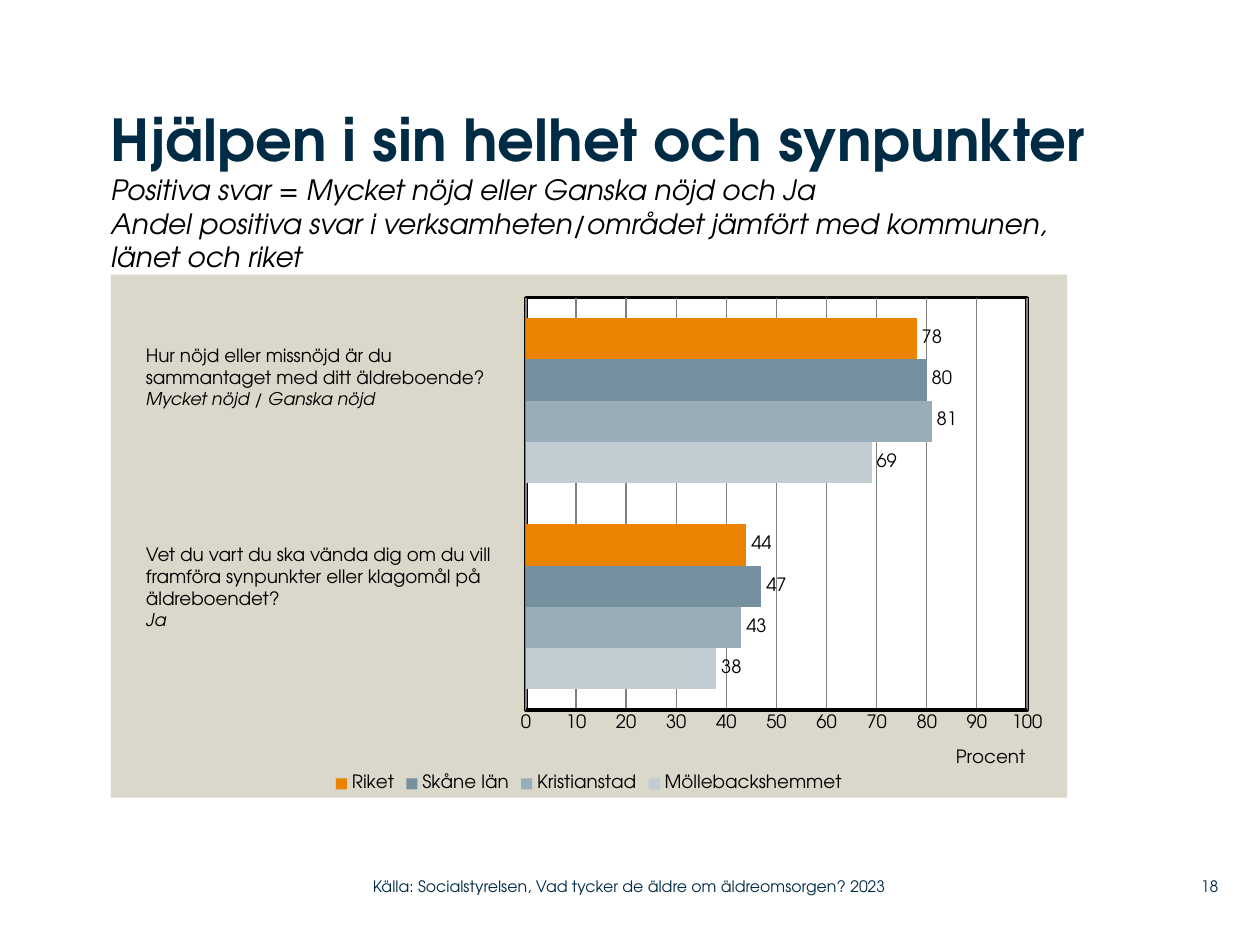
from lxml.etree import fromstring
from pptx import Presentation
from pptx.chart.data import CategoryChartData
from pptx.dml.color import RGBColor
from pptx.enum.chart import XL_CHART_TYPE, XL_LABEL_POSITION, XL_LEGEND_POSITION, XL_TICK_MARK
from pptx.enum.text import MSO_ANCHOR, PP_ALIGN
from pptx.oxml.ns import nsdecls, qn
from pptx.util import Inches, Pt

FONT = "TeX Gyre Adventor"
NAVY = "002B45"
BLACK = "000000"
LEFT = 0.88
SERIES = [
    ("Möllebackshemmet", (38, 69), "C2CDD3"),
    ("Kristianstad", (43, 81), "99ADB9"),
    ("Skåne län", (47, 80), "75909F"),
    ("Riket", (44, 78), "E98300"),
]
HEADING = {"size": Pt(33), "bold": True, "italic": False}
SUBTITLE = {"size": Pt(16), "bold": False, "italic": True}
QUESTION = {"size": Pt(10.5), "bold": False, "italic": False}
ANSWER = {"size": Pt(10), "bold": False, "italic": True}
FOOTER = {"size": Pt(9), "bold": False, "italic": False}


def color(value):
    return RGBColor.from_string(value)


def set_font(font, fmt, fill=BLACK):
    for name, value in {"name": FONT, **fmt}.items():
        setattr(font, name, value)
    font.color.rgb = color(fill)


def add_run(p, text, fmt, fill=BLACK):
    r = p.add_run()
    r.text = text
    set_font(r.font, fmt, fill)


def set_frame(tf, anchor, margin_x=0.0, margin_y=0.0):
    values = {
        "word_wrap": True,
        "vertical_anchor": anchor,
        "margin_left": Inches(margin_x),
        "margin_right": Inches(margin_x),
        "margin_top": Inches(margin_y),
        "margin_bottom": Inches(margin_y),
    }
    for name, value in values.items():
        setattr(tf, name, value)


def add_title(s):
    sp = s.shapes.title
    sp.left, sp.top, sp.width, sp.height = map(Inches, (LEFT, 0.83, 7.79, 1.34))
    set_frame(sp.text_frame, MSO_ANCHOR.BOTTOM)
    p = sp.text_frame.paragraphs[0]
    p.alignment = PP_ALIGN.LEFT
    p.line_spacing = 1.0
    add_run(p, "Hjälpen i sin helhet och synpunkter", HEADING, NAVY)
    for line in (
        "Positiva svar = Mycket nöjd eller Ganska nöjd och Ja",
        "Andel positiva svar i verksamheten/området jämfört med kommunen, länet och riket",
    ):
        p.add_line_break()
        add_run(p, line, SUBTITLE)


def add_question(s, top, lines, answer):
    sp = s.shapes.add_textbox(*map(Inches, (1.06, top, 3.1, 0.81)))
    tf = sp.text_frame
    set_frame(tf, MSO_ANCHOR.TOP, 0.1, 0.05)
    for i, line in enumerate([*lines, answer]):
        p = tf.paragraphs[0] if i == 0 else tf.add_paragraph()
        add_run(p, line, QUESTION if i < len(lines) else ANSWER)


def add_footer(s, left, width, text, align):
    sp = s.shapes.add_textbox(*map(Inches, (left, 6.89, width, 0.29)))
    set_frame(sp.text_frame, MSO_ANCHOR.MIDDLE)
    p = sp.text_frame.paragraphs[0]
    p.alignment = align
    add_run(p, text, FOOTER, NAVY)


def area_xml(fill, line):
    return fromstring(
        f'<c:spPr {nsdecls("c", "a")}><a:solidFill><a:srgbClr val="{fill}"/></a:solidFill>{line}</c:spPr>'
    )


def layout_xml(**values):
    tags = "".join(f'<c:{tag} val="{value}"/>' for tag, value in values.items())
    return fromstring(f'<c:layout {nsdecls("c")}><c:manualLayout>{tags}</c:manualLayout></c:layout>')


def drop_layout(parent):
    for layout in parent.findall(qn("c:layout")):
        parent.remove(layout)


def style_areas(chart):
    space = chart.element
    space.find(qn("c:chart")).addnext(area_xml("DAD7CB", "<a:ln><a:noFill/></a:ln>"))
    plot_area = space.find(".//" + qn("c:plotArea"))
    drop_layout(plot_area)
    plot_area.insert(0, layout_xml(
        layoutTarget="inner", xMode="edge", yMode="edge", x=0.434, y=0.044, w=0.524, h=0.789))
    border = f'<a:ln w="{Pt(2)}"><a:solidFill><a:srgbClr val="{BLACK}"/></a:solidFill></a:ln>'
    plot_area.append(area_xml("FFFFFF", border))


def style_value_axis(axis):
    values = {
        "minimum_scale": 0,
        "maximum_scale": 100,
        "major_unit": 10,
        "major_tick_mark": XL_TICK_MARK.NONE,
        "minor_tick_mark": XL_TICK_MARK.NONE,
        "has_major_gridlines": True,
    }
    for name, value in values.items():
        setattr(axis, name, value)
    axis.format.line.color.rgb = color(BLACK)
    axis.format.line.width = Pt(2)
    grid = axis.major_gridlines.format.line
    grid.color.rgb = color("808080")
    grid.width = Pt(0.75)
    set_font(axis.tick_labels.font, QUESTION)
    add_run(axis.axis_title.text_frame.paragraphs[0], "Procent", QUESTION)
    title = axis.axis_title.element
    drop_layout(title)
    title.find(qn("c:tx")).addnext(layout_xml(xMode="edge", yMode="edge", x=0.88, y=0.9))


def add_bars(s):
    data = CategoryChartData()
    data.categories = ["1", "2"]
    for name, values, _ in SERIES:
        data.add_series(name, values)
    chart = s.shapes.add_chart(
        XL_CHART_TYPE.BAR_CLUSTERED, *map(Inches, (LEFT, 2.18, 7.59, 4.15)), data
    ).chart
    set_font(chart.font, QUESTION)
    chart.has_title = False
    chart.has_legend = True
    chart.legend.position = XL_LEGEND_POSITION.BOTTOM
    chart.legend.include_in_layout = False
    set_font(chart.legend.font, QUESTION)
    chart.category_axis.visible = False
    style_value_axis(chart.value_axis)
    plot = chart.plots[0]
    plot.gap_width = 100
    plot.vary_by_categories = False
    for series, (_, _, fill) in zip(plot.series, SERIES):
        series.format.fill.solid()
        series.format.fill.fore_color.rgb = color(fill)
        labels = series.data_labels
        labels.show_value = True
        labels.position = XL_LABEL_POSITION.OUTSIDE_END
        set_font(labels.font, QUESTION)
    style_areas(chart)


def main():
    prs = Presentation()
    prs.slide_width, prs.slide_height = Inches(10), Inches(7.5)
    s = prs.slides.add_slide(prs.slide_layouts[5])
    add_bars(s)
    add_title(s)
    add_question(s, 2.68, ["Hur nöjd eller missnöjd är du", "sammantaget med ditt äldreboende?"],
                 "Mycket nöjd / Ganska nöjd")
    add_question(s, 4.26, ["Vet du vart du ska vända dig om du vill framföra synpunkter eller "
                           "klagomål på äldreboendet?"], "Ja")
    add_footer(s, 9.2, 0.47, "18", PP_ALIGN.RIGHT)
    add_footer(s, 2.96, 4.43, "Källa: Socialstyrelsen, Vad tycker de äldre om äldreomsorgen? 2023",
               PP_ALIGN.LEFT)
    prs.save("out.pptx")


if __name__ == "__main__":
    main()
